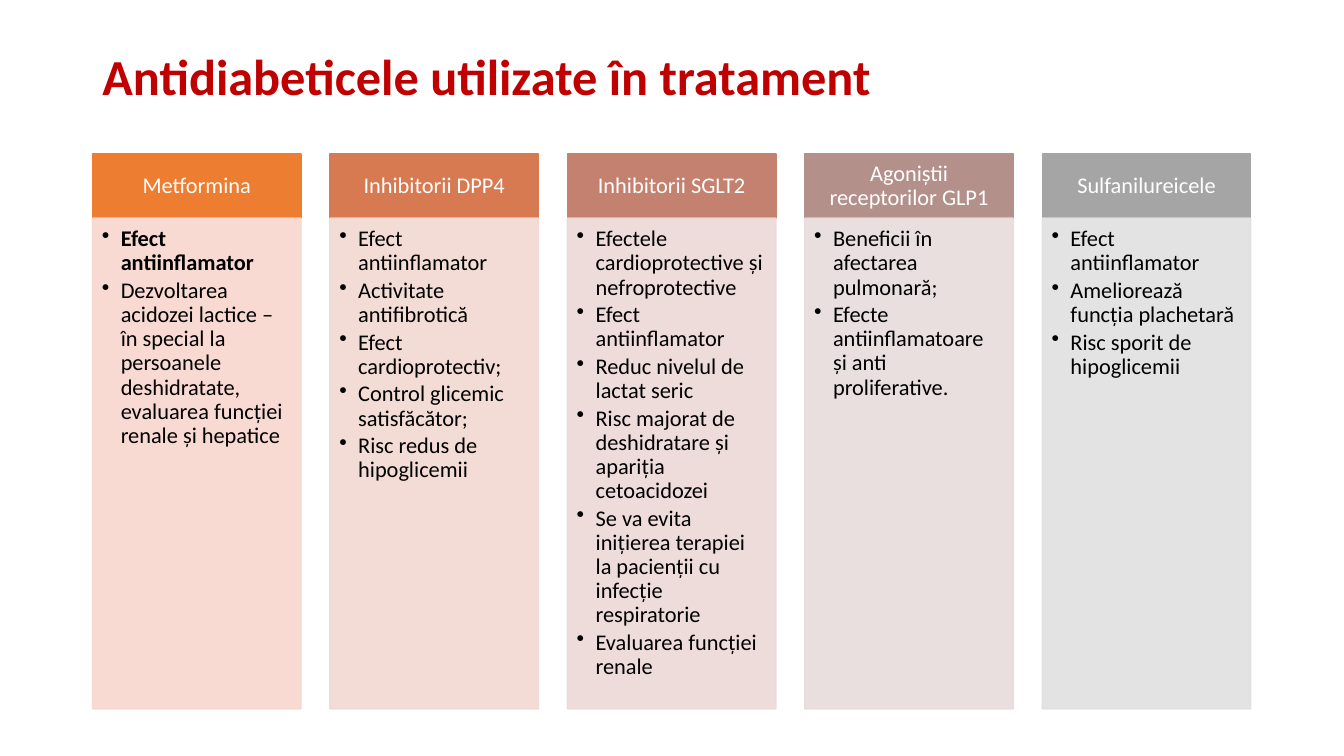
from dataclasses import dataclass

from lxml.etree import SubElement
from pptx import Presentation
from pptx.dml.color import RGBColor
from pptx.enum.shapes import MSO_SHAPE as Preset
from pptx.enum.text import MSO_ANCHOR as Anchor, PP_ALIGN as Align
from pptx.oxml.ns import qn
from pptx.shapes.autoshape import Shape
from pptx.slide import Slide
from pptx.util import Pt

RED = RGBColor(0xC0, 0x00, 0x00)
WHITE = RGBColor(0xFF, 0xFF, 0xFF)
BLACK = RGBColor(0x00, 0x00, 0x00)
ORANGE = RGBColor(0xED, 0x7D, 0x31)
PALE_ORANGE = RGBColor(0xF8, 0xD7, 0xCE)
TERRACOTTA = RGBColor(0xD8, 0x7A, 0x51)
PALE_TERRACOTTA = RGBColor(0xF2, 0xD8, 0xD2)
ROSE = RGBColor(0xC4, 0x81, 0x70)
PALE_ROSE = RGBColor(0xED, 0xD9, 0xD7)
TAUPE = RGBColor(0xB4, 0x90, 0x8B)
PALE_TAUPE = RGBColor(0xE7, 0xDC, 0xDC)
GREY = RGBColor(0xA5, 0xA5, 0xA5)
PALE_GREY = RGBColor(0xE1, 0xE1, 0xE1)

FONT = "Calibri"
LEFT = 66.1
COLUMN_WIDTH = 149
COLUMN_STEP = 169.6
HEADER_TOP = 110
HEADER_HEIGHT = 45.8
BODY_HEIGHT = 350.6
INDENT = 13.5


@dataclass(frozen=True)
class DrugClass:
    name: str
    header_color: RGBColor
    body_color: RGBColor
    effects: tuple[str, ...]
    bold_effects: int = 0


DRUG_CLASSES = (
    DrugClass("Metformina", ORANGE, PALE_ORANGE, (
        "Efect antiinflamator",
        "Dezvoltarea acidozei lactice – în special la persoanele deshidratate, "
        "evaluarea funcției renale și hepatice",
    ), bold_effects=1),
    DrugClass("Inhibitorii DPP4", TERRACOTTA, PALE_TERRACOTTA, (
        "Efect antiinflamator",
        "Activitate antifibrotică",
        "Efect cardioprotectiv;",
        "Control glicemic satisfăcător;",
        "Risc redus de hipoglicemii",
    )),
    DrugClass("Inhibitorii SGLT2", ROSE, PALE_ROSE, (
        "Efectele cardioprotective și nefroprotective",
        "Efect antiinflamator",
        "Reduc nivelul de lactat seric",
        "Risc majorat de deshidratare și apariția cetoacidozei",
        "Se va evita inițierea terapiei la pacienții cu infecție respiratorie",
        "Evaluarea funcției renale",
    )),
    DrugClass("Agoniștii receptorilor GLP1", TAUPE, PALE_TAUPE, (
        "Beneficii în afectarea pulmonară;",
        "Efecte antiinflamatoare și anti proliferative.",
    )),
    DrugClass("Sulfanilureicele", GREY, PALE_GREY, (
        "Efect antiinflamator",
        "Ameliorează funcția plachetară",
        "Risc sporit de hipoglicemii",
    )),
)


def write_lines(box: Shape, lines: tuple[str, ...], size: float, color: RGBColor,
                align: Align, bold_lines: int = 0) -> None:
    frame = box.text_frame
    frame.word_wrap = True
    frame.text = "\n".join(lines)
    for index, para in enumerate(frame.paragraphs):
        para.alignment = align
        para.line_spacing = 0.9
        for span in para.runs:
            span.font.name = FONT
            span.font.size = Pt(size)
            span.font.bold = index < bold_lines
            span.font.color.rgb = color


def set_insets(box: Shape, left: float, top: float, right: float, bottom: float) -> None:
    frame = box.text_frame
    frame.margin_left, frame.margin_top = Pt(left), Pt(top)
    frame.margin_right, frame.margin_bottom = Pt(right), Pt(bottom)


def add_panel(page: Slide, left: float, top: float, height: float, color: RGBColor) -> Shape:
    panel = page.shapes.add_shape(
        Preset.RECTANGLE, Pt(left), Pt(top), Pt(COLUMN_WIDTH), Pt(height))
    panel.shadow.inherit = False
    panel.fill.solid()
    panel.fill.fore_color.rgb = color
    panel.line.color.rgb = color
    panel.line.width = Pt(1)
    return panel


def make_translucent(panel: Shape, percent: int) -> None:
    for color in panel.element.spPr.iter(qn("a:srgbClr")):
        SubElement(color, qn("a:alpha"), val=str(percent * 1000))


def add_bullets(box: Shape) -> None:
    for para in box.text_frame.paragraphs:
        para.level = 1
        para.space_after = Pt(2.4)
        properties = para._p.get_or_add_pPr()
        properties.set("marL", str(Pt(INDENT)))
        properties.set("indent", str(-Pt(INDENT)))
        SubElement(properties, qn("a:buChar"), char="•")


def add_title(page: Slide, text: str) -> None:
    box = page.shapes.add_textbox(Pt(LEFT), Pt(28.8), Pt(828), Pt(55.4))
    box.text_frame.vertical_anchor = Anchor.MIDDLE
    write_lines(box, (text,), 36, RED, Align.LEFT, bold_lines=1)


def add_column(page: Slide, left: float, drug: DrugClass) -> None:
    header = add_panel(page, left, HEADER_TOP, HEADER_HEIGHT, drug.header_color)
    header.text_frame.vertical_anchor = Anchor.MIDDLE
    set_insets(header, 9, 5, 9, 5)
    write_lines(header, (drug.name,), 16, WHITE, Align.CENTER)

    body = add_panel(page, left, HEADER_TOP + HEADER_HEIGHT, BODY_HEIGHT, drug.body_color)
    make_translucent(body, 90)
    body.text_frame.vertical_anchor = Anchor.TOP
    set_insets(body, 6.7, 6.7, 9, 10)
    write_lines(body, drug.effects, 16, BLACK, Align.LEFT, drug.bold_effects)
    add_bullets(body)


def main() -> None:
    deck = Presentation()
    deck.slide_width, deck.slide_height = Pt(960), Pt(540)
    page = deck.slides.add_slide(deck.slide_layouts[6])
    add_title(page, "Antidiabeticele utilizate în tratament")
    for index, drug in enumerate(DRUG_CLASSES):
        add_column(page, LEFT + index * COLUMN_STEP, drug)
    deck.save("out.pptx")


if __name__ == "__main__":
    main()
